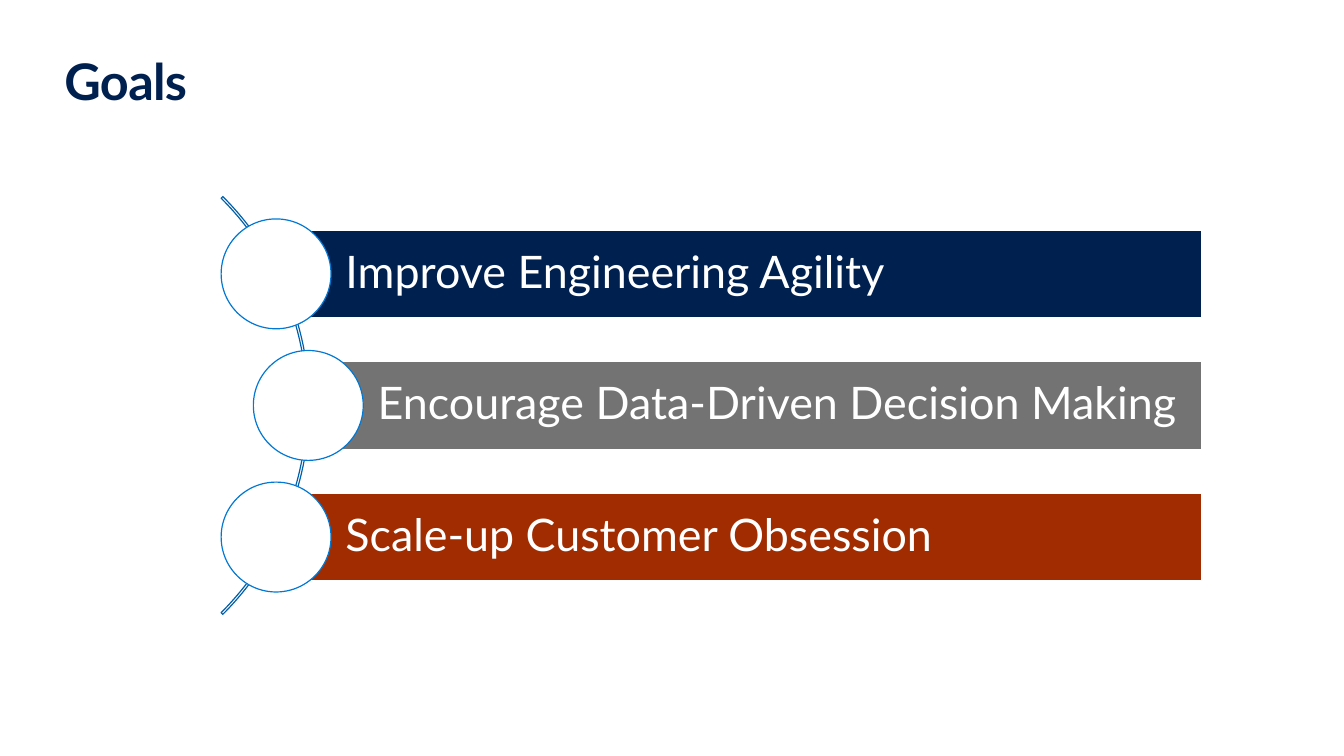
from dataclasses import dataclass

from pptx import Presentation
from pptx.dml.color import RGBColor
from pptx.enum import shapes, text
from pptx.util import Pt


@dataclass(frozen=True)
class Theme:
    font: str = "Lato"
    navy: str = "002050"
    gray: str = "737373"
    rust: str = "A12C01"
    white: str = "FFFFFF"
    ring: str = "0078D4"
    arc: str = "0060AA"
    title_size: float = 36
    goal_size: float = 32
    line_width: float = 0.85


THEME = Theme()
ARC_CENTER_X = 10
ARC_DIAMETER = 422
MIDDLE_Y = 289.6
ROW_PITCH = 94
BAR_HEIGHT = 62.5
BAR_RIGHT = 858
CIRCLE_DIAMETER = 78.5
GOALS = [
    ("Improve Engineering Agility", THEME.navy, 197.2),
    ("Encourage Data-Driven Decision Making", THEME.gray, 220.2),
    ("Scale-up Customer Obsession", THEME.rust, 197.2),
]


def set_insets(frame, left, other):
    frame.margin_left = Pt(left)
    frame.margin_top = frame.margin_right = frame.margin_bottom = Pt(other)


def add_run(paragraph, wording, size, color, bold=False):
    run = paragraph.add_run()
    run.text = wording
    run.font.name = THEME.font
    run.font.size = Pt(size)
    run.font.bold = bold
    run.font.color.rgb = RGBColor.from_string(color)
    return run


def add_shape(slide, kind, left, top, width, height, line, fill=None):
    shape = slide.shapes.add_shape(kind, Pt(left), Pt(top), Pt(width), Pt(height))
    shape.shadow.inherit = False
    if fill:
        shape.fill.solid()
        shape.fill.fore_color.rgb = RGBColor.from_string(fill)
    else:
        shape.fill.background()
    shape.line.color.rgb = RGBColor.from_string(line)
    shape.line.width = Pt(THEME.line_width)
    return shape


def set_title(slide, wording):
    title = slide.shapes.title
    title.left, title.top, title.width, title.height = Pt(46), Pt(36), Pt(868), Pt(44)
    frame = title.text_frame
    frame.auto_size = text.MSO_AUTO_SIZE.NONE
    frame.vertical_anchor = text.MSO_ANCHOR.TOP
    set_insets(frame, 0, 0)
    paragraph = frame.paragraphs[0]
    paragraph.alignment = text.PP_ALIGN.LEFT
    run = add_run(paragraph, wording, THEME.title_size, THEME.navy, bold=True)
    run._r.get_or_add_rPr().set("spc", "-50")


def add_arc(slide):
    radius = ARC_DIAMETER / 2
    arc = add_shape(slide, shapes.MSO_SHAPE.BLOCK_ARC, ARC_CENTER_X - radius,
                    MIDDLE_Y - radius, ARC_DIAMETER, ARC_DIAMETER, THEME.arc)
    for index, value in enumerate((189, 27, 0.004)):
        arc.adjustments[index] = value


def add_goal(slide, wording, color, left, center_y):
    bar = add_shape(slide, shapes.MSO_SHAPE.RECTANGLE, left, center_y - BAR_HEIGHT / 2,
                    BAR_RIGHT - left, BAR_HEIGHT, THEME.white, color)
    frame = bar.text_frame
    frame.word_wrap = True
    frame.vertical_anchor = text.MSO_ANCHOR.MIDDLE
    set_insets(frame, 49.6, 6.4)
    paragraph = frame.paragraphs[0]
    paragraph.alignment = text.PP_ALIGN.LEFT
    paragraph.line_spacing = 0.9
    add_run(paragraph, wording, THEME.goal_size, THEME.white)
    radius = CIRCLE_DIAMETER / 2
    add_shape(slide, shapes.MSO_SHAPE.OVAL, left - radius, center_y - radius,
              CIRCLE_DIAMETER, CIRCLE_DIAMETER, THEME.ring, THEME.white)


def main():
    presentation = Presentation()
    presentation.slide_width = Pt(960)
    presentation.slide_height = Pt(540)
    slide = presentation.slides.add_slide(presentation.slide_layouts.get_by_name("Title Only"))
    set_title(slide, "Goals")
    add_arc(slide)
    for row, (wording, color, left) in enumerate(GOALS):
        add_goal(slide, wording, color, left, MIDDLE_Y + (row - 1) * ROW_PITCH)
    presentation.save("out.pptx")


if __name__ == "__main__":
    main()
